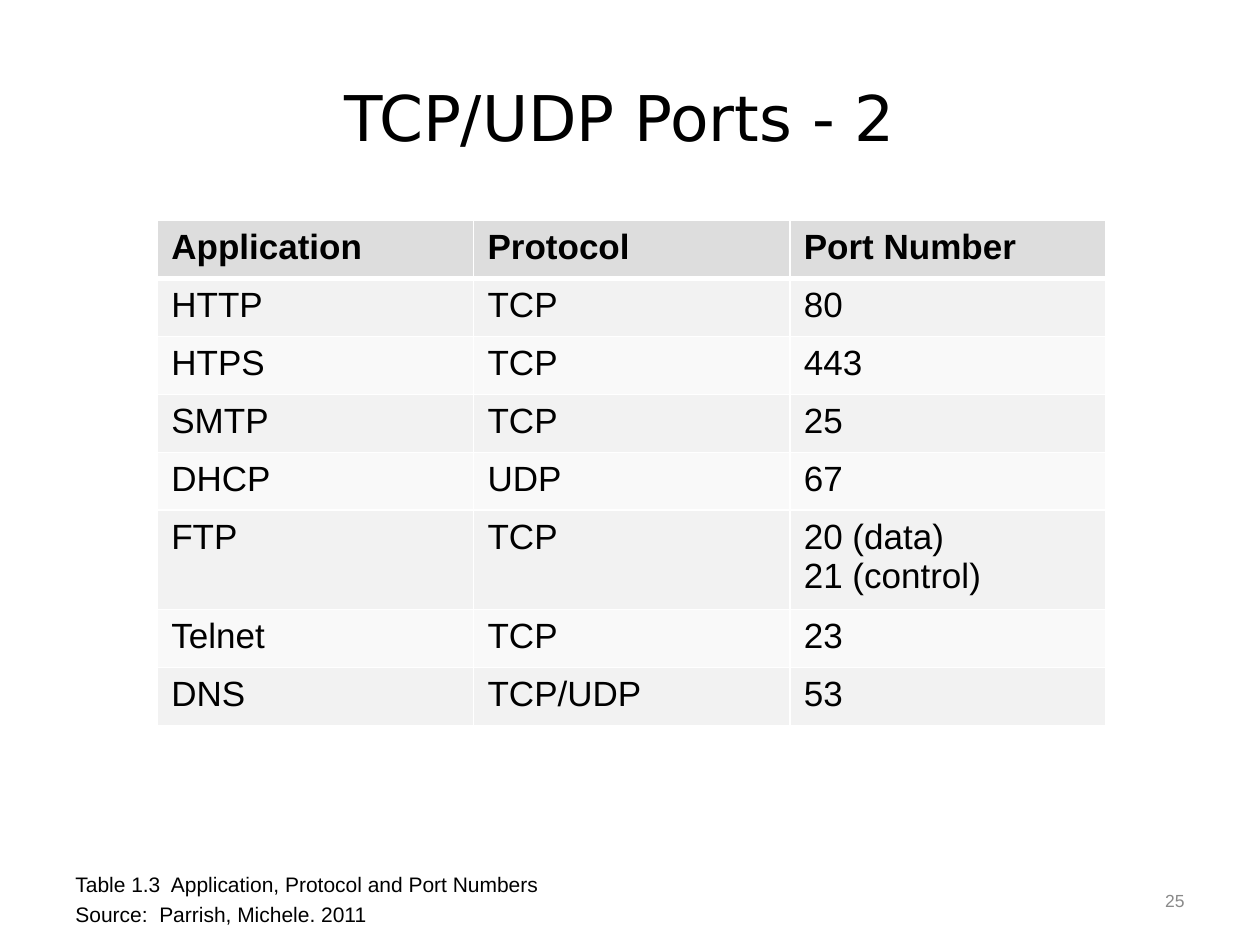
"""Build the slide with the table of TCP and UDP port numbers."""
from lxml.etree import SubElement
from pptx import Presentation
from pptx.dml.color import RGBColor
from pptx.enum.text import MSO_ANCHOR as Anchor, PP_ALIGN as Align
from pptx.oxml.ns import qn
from pptx.util import Inches, Pt

BLACK = RGBColor(0x00, 0x00, 0x00)
GREY = RGBColor(0x89, 0x89, 0x89)
WHITE = RGBColor(0xFF, 0xFF, 0xFF)
HEADER_FILL = RGBColor(0xDD, 0xDD, 0xDD)
BAND_FILLS = [RGBColor(0xF9, 0xF9, 0xF9), RGBColor(0xF2, 0xF2, 0xF2)]

PORT_ROWS = [
    ("Application", "Protocol", "Port Number"),
    ("HTTP", "TCP", "80"),
    ("HTPS", "TCP", "443"),
    ("SMTP", "TCP", "25"),
    ("DHCP", "UDP", "67"),
    ("FTP", "TCP", "20 (data)\n21 (control)"),
    ("Telnet", "TCP", "23"),
    ("DNS", "TCP/UDP", "53"),
]


def write_lines(frame, lines, size, font="Arial", color=BLACK, bold=False, align=Align.LEFT, before=0):
    for index, line in enumerate(lines):
        para = frame.paragraphs[0] if index == 0 else frame.add_paragraph()
        para.alignment = align
        para.space_before = Pt(before)
        span = para.add_run()
        span.text = line
        span.font.name = font
        span.font.size = Pt(size)
        span.font.bold = bold
        span.font.color.rgb = color


def set_border(cell, side, width):
    line = SubElement(cell._tc.get_or_add_tcPr(), qn(f"a:{side}"), w=str(Pt(width)))
    fill = SubElement(line, qn("a:solidFill"))
    SubElement(fill, qn("a:srgbClr"), val=str(WHITE))


deck = Presentation()
deck.slide_width, deck.slide_height = Inches(10), Inches(7.5)
page = deck.slides.add_slide(deck.slide_layouts[6])

text_boxes = [
    ((0.5, 0.3, 9, 1.25), Anchor.MIDDLE, ["TCP/UDP Ports - 2 "],
     dict(size=36, font="DejaVu Sans", align=Align.CENTER)),
    ((0.5, 6.87, 8.35, 0.58), Anchor.TOP,
     ["Table 1.3  Application, Protocol and Port Numbers", "Source:  Parrish, Michele. 2011"],
     dict(size=12, before=2.4)),
    ((8.94, 6.85, 0.56, 0.6), Anchor.MIDDLE, ["25"],
     dict(size=10, color=GREY, align=Align.RIGHT)),
]
for place, anchor, lines, style in text_boxes:
    box = page.shapes.add_textbox(*map(Inches, place))
    box.text_frame.word_wrap = True
    box.text_frame.vertical_anchor = anchor
    write_lines(box.text_frame, lines, **style)

table = page.shapes.add_table(
    len(PORT_ROWS), 3, Inches(1.25), Inches(1.75), Inches(7.53), Inches(4.01)
).table
for column in table.columns:
    column.width = Inches(2.51)

for row_index, values in enumerate(PORT_ROWS):
    is_header = row_index == 0
    has_two_lines = "\n" in values[-1]
    table.rows[row_index].height = Inches(0.79 if has_two_lines else 0.46)
    for column_index, value in enumerate(values):
        cell = table.cell(row_index, column_index)
        cell.margin_left = cell.margin_right = Inches(0.11)
        cell.margin_top = cell.margin_bottom = Inches(0.06)
        write_lines(cell.text_frame, value.split("\n"), 20, bold=is_header)
        for side in ("lnL", "lnR", "lnT", "lnB"):
            is_header_rule = (row_index, side) in [(0, "lnB"), (1, "lnT")]
            set_border(cell, side, 3 if is_header_rule else 1)
        cell.fill.solid()
        cell.fill.fore_color.rgb = HEADER_FILL if is_header else BAND_FILLS[row_index % 2]

deck.save("out.pptx")
